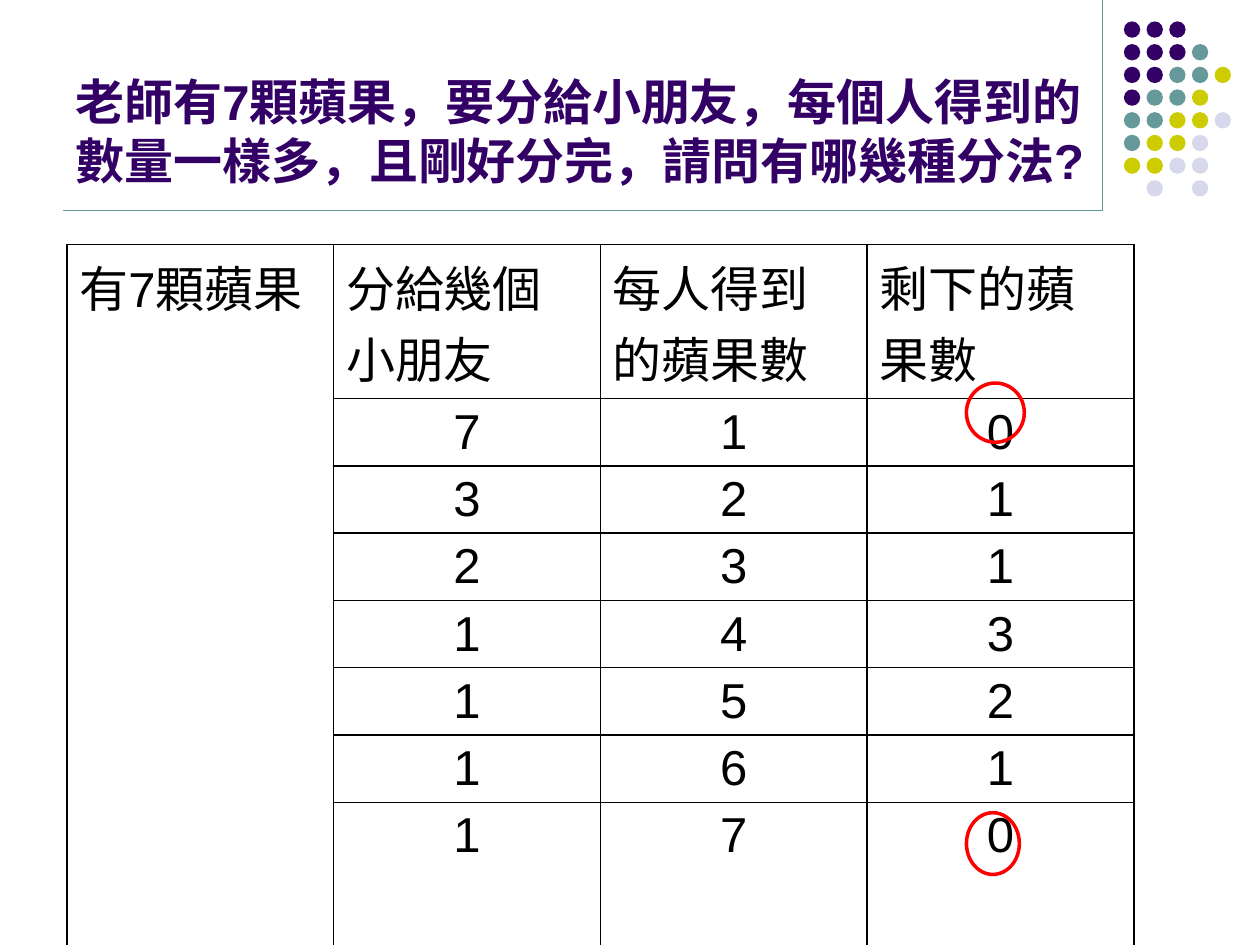
from lxml.etree import SubElement
from pptx import Presentation
from pptx.dml.color import RGBColor
from pptx.enum.shapes import MSO_CONNECTOR, MSO_SHAPE
from pptx.enum.text import MSO_ANCHOR, MSO_AUTO_SIZE, PP_ALIGN
from pptx.oxml.ns import qn
from pptx.util import Inches, Pt

COLORS = {
    "purple": "330066",
    "teal": "669999",
    "olive": "CCCC00",
    "lavender": "D8D8EC",
    "black": "000000",
    "red": "FF0000",
}
DOT_COLORS = {"P": "purple", "T": "teal", "O": "olive", "L": "lavender"}
DOT_ROWS = ["PPP", "PPPT", "PPTTO", "PTTO", "TTOOL", "TOOL", "OOLL", " L L"]
HEADINGS = ["有7顆蘋果", "分給幾個小朋友", "每人得到的蘋果數", "剩下的蘋果數"]
DIVISIONS = [(7, 1, 0), (3, 2, 1), (2, 3, 1), (1, 4, 3), (1, 5, 2), (1, 6, 1), (1, 7, 0)]


class SlideBuilder:
    """Holds the shared text style and the slide being filled."""

    def __init__(self, slide, font="Arial", size=28):
        self.slide = slide
        self.font = font
        self.size = size

    def color(self, name):
        return RGBColor.from_string(COLORS[name])

    def add_text(self, frame, text, color, bold=False, align=PP_ALIGN.LEFT):
        paragraph = frame.paragraphs[0]
        paragraph.alignment = align
        run = paragraph.add_run()
        run.text = text
        run.font.name = self.font
        run.font.size = Pt(self.size)
        run.font.bold = bold
        run.font.color.rgb = self.color(color)

    def title(self, text, left, top, width, height):
        heading = self.slide.shapes.title
        heading.left, heading.top = Inches(left), Inches(top)
        heading.width, heading.height = Inches(width), Inches(height)
        frame = heading.text_frame
        frame.auto_size = MSO_AUTO_SIZE.NONE
        frame.word_wrap = True
        frame.vertical_anchor = MSO_ANCHOR.BOTTOM
        self.add_text(frame, text, color="purple", bold=True)

    def rule(self, start, end):
        points = [Inches(value) for value in (*start, *end)]
        rule = self.slide.shapes.add_connector(MSO_CONNECTOR.STRAIGHT, *points)
        rule.line.color.rgb = self.color("teal")
        rule.line.width = Pt(0.75)
        SubElement(rule._element.spPr, qn("a:effectLst"))

    def ellipse(self, left, top, width, height, fill=None, line=None):
        box = [Inches(value) for value in (left, top, width, height)]
        ellipse = self.slide.shapes.add_shape(MSO_SHAPE.OVAL, *box)
        ellipse.shadow.inherit = False
        if fill:
            ellipse.fill.solid()
            ellipse.fill.fore_color.rgb = self.color(fill)
        else:
            ellipse.fill.background()
        if line:
            ellipse.line.color.rgb = self.color(line)
            ellipse.line.width = Pt(2)
        else:
            ellipse.line.fill.background()

    def dots(self, left, top, pitch, size):
        for row, pattern in enumerate(DOT_ROWS):
            for column, code in enumerate(pattern):
                if code in DOT_COLORS:
                    self.ellipse(left + column * pitch, top + row * pitch, size, size,
                                 fill=DOT_COLORS[code])

    def border(self, cell):
        properties = cell._tc.get_or_add_tcPr()
        for position, side in enumerate(("a:lnL", "a:lnR", "a:lnT", "a:lnB")):
            edge = properties.makeelement(qn(side), {"w": str(Pt(1))})
            fill = SubElement(edge, qn("a:solidFill"))
            SubElement(fill, qn("a:srgbClr"), val=COLORS["black"])
            properties.insert(position, edge)

    def table(self, headings, rows, left, top, width, height, heading_height, row_height):
        box = [Inches(value) for value in (left, top, width, height)]
        table = self.slide.shapes.add_table(len(rows) + 1, len(headings), *box).table
        table.first_row = table.horz_banding = False
        for index, row in enumerate(table.rows):
            row.height = Inches(row_height if index else heading_height)
        table.cell(0, 0).merge(table.cell(len(rows), 0))
        for cell in table.iter_cells():
            cell.fill.background()
            self.border(cell)
        for column, heading in enumerate(headings):
            self.add_text(table.cell(0, column).text_frame, heading, color="black")
        for index, values in enumerate(rows, 1):
            for column, value in enumerate(values, 1):
                self.add_text(table.cell(index, column).text_frame, str(value),
                              color="black", align=PP_ALIGN.CENTER)


def main():
    presentation = Presentation()
    presentation.slide_width, presentation.slide_height = Inches(10), Inches(7.5)
    slide = presentation.slides.add_slide(presentation.slide_layouts[5])
    builder = SlideBuilder(slide)
    builder.rule((8.75, 0), (8.75, 1.67))
    builder.dots(left=8.92, top=0.17, pitch=0.18, size=0.13)
    builder.rule((0.5, 1.67), (8.75, 1.67))
    builder.title("老師有7顆蘋果，要分給小朋友，每個人得到的數量一樣多，且剛好分完，請問有哪幾種分法?",
                  0.5, 0.13, 8.25, 1.42)
    builder.table(HEADINGS, DIVISIONS, 0.53, 1.94, 8.47, 5,
                  heading_height=0.93, row_height=0.52)
    builder.ellipse(7.67, 3.04, 0.46, 0.47, line="red")
    builder.ellipse(7.67, 6.45, 0.42, 0.49, line="red")
    presentation.save("out.pptx")


if __name__ == "__main__":
    main()
